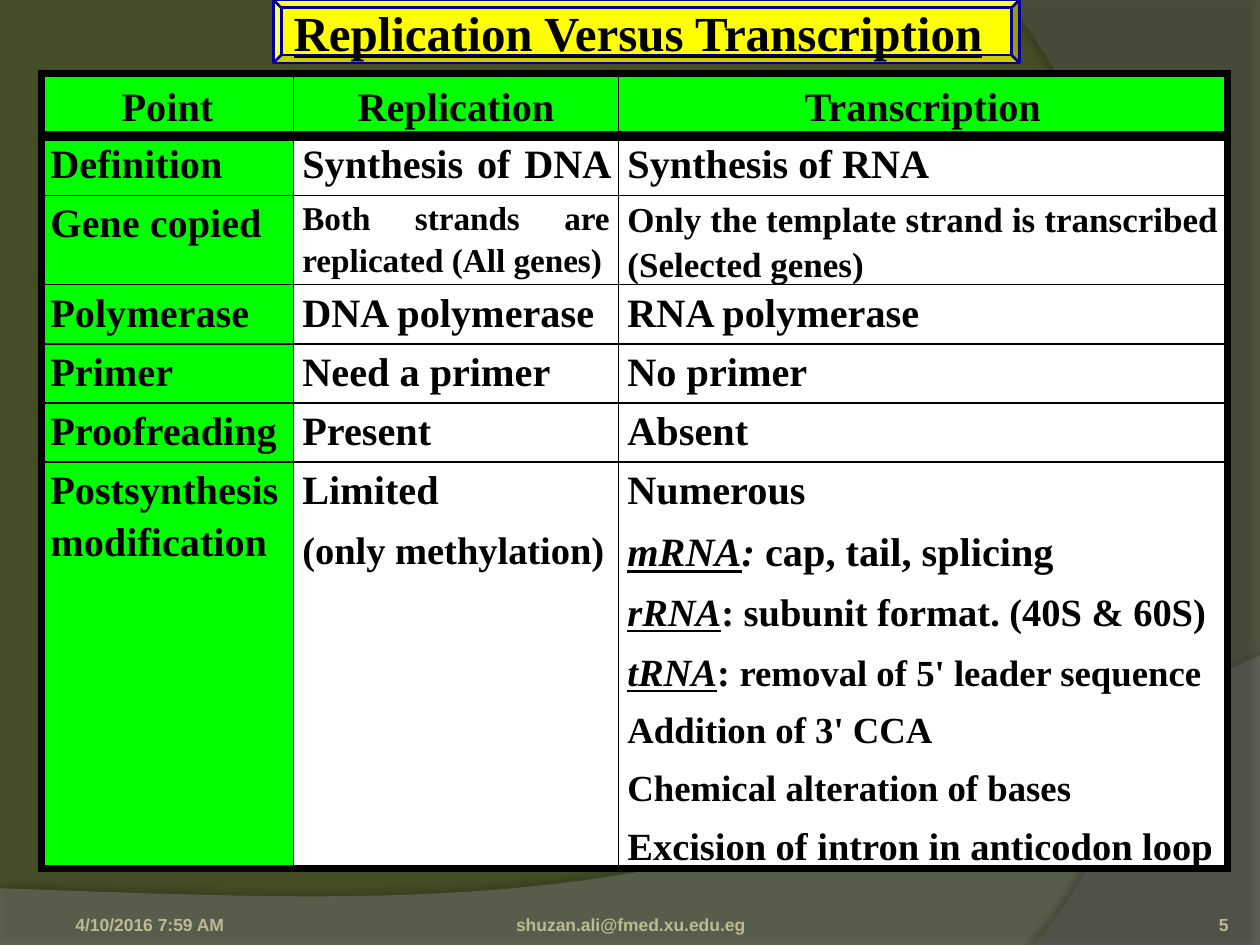
from lxml import etree
from pptx import Presentation
from pptx.dml.color import RGBColor
from pptx.enum import shapes, text
from pptx.oxml import parse_xml
from pptx.oxml.ns import nsdecls, qn
from pptx.util import Inches, Pt

ALIGN = text.PP_ALIGN
ANCHOR = text.MSO_ANCHOR
SERIF = "Times New Roman"
BLACK, GREEN, WHITE = "000000", "00FF00", "FFFFFF"


def paint(color_format, hex_color):
    """Give a fill or a font a solid colour."""
    if hasattr(color_format, "solid"):
        color_format.solid()
        color_format = color_format.fore_color
    else:
        color_format = color_format.color
    color_format.rgb = RGBColor.from_string(hex_color)


def add_run(paragraph, words, size, font=SERIF, color=BLACK, style=""):
    """Add a bold run; style may hold i (italic) and u (underline)."""
    run = paragraph.add_run()
    run.text = words
    run.font.name, run.font.size, run.font.bold = font, Pt(size), True
    run.font.italic, run.font.underline = "i" in style, "u" in style
    paint(run.font, color)


prs = Presentation()
prs.slide_width, prs.slide_height = Inches(10), Inches(7.5)
slide = prs.slides.add_slide(prs.slide_layouts[5])
paint(slide.background.fill, "444D26")

# Background waves: corner points, then one Bezier curve given by four points.
# Each ends with colour, opacity and shadow (opacity, blur, distance, angle).
waves = [
    ([(0, 7.5), (10, 7.5)], [(10, 5.2), (5.59, 7.29), (3.91, 7.19), (0, 7.05)],
     "7F7F7F", 45, (35, 4, 3.5, 270)),
    ([(10, 0), (10, 7.5)], [(8.21, 7.5), (9.35, 6.19), (10.18, 3), (8, 0)],
     "5E5E5E", 40, (45, 4, 4, 180)),
]
STEPS = 40
for corners, curve, color, opacity, (shade, blur, distance, angle) in waves:
    points = list(corners)
    for step in range(STEPS + 1):
        t = step / STEPS
        weights = ((1 - t) ** 3, 3 * t * (1 - t) ** 2, 3 * t * t * (1 - t), t ** 3)
        points.append([sum(w * p[axis] for w, p in zip(weights, curve)) for axis in (0, 1)])
    outline = [(Inches(x), Inches(y)) for x, y in points]
    builder = slide.shapes.build_freeform(*outline[0])
    builder.add_line_segments(outline[1:], close=True)
    wave = builder.convert_to_shape()
    paint(wave.fill, color)
    wave.line.fill.background()
    wave.shadow.inherit = False
    properties = wave._element.spPr
    fill_color = properties.find(qn("a:solidFill"))[0]
    etree.SubElement(fill_color, qn("a:alpha"), val=str(opacity * 1000))
    properties.find(qn("a:effectLst")).append(parse_xml(
        f'<a:outerShdw {nsdecls("a")} blurRad="{Pt(blur)}" dist="{Pt(distance)}" '
        f'dir="{angle * 60000}" rotWithShape="0"><a:srgbClr val="000000">'
        f'<a:alpha val="{shade * 1000}"/></a:srgbClr></a:outerShdw>'))

# Each cell is a list of paragraphs, each paragraph a list of (words, size, style).
rows = [
    [[[(head, 23, "")]] for head in ("Point", "Replication", "Transcription")],
    [[[("Definition ", 23, "")]], [[("Synthesis of DNA ", 23, "")]],
     [[("Synthesis of RNA ", 23, "")]]],
    [[[("Gene copied", 23, "")]],
     [[("Both strands are replicated (All genes)", 19, "")]],
     [[("Only the template strand is transcribed (Selected genes)", 20, "")]]],
    [[[("Polymerase ", 23, "")]], [[("DNA polymerase", 23, "")]],
     [[("RNA polymerase", 23, "")]]],
    [[[("Primer ", 23, "")]], [[("Need a primer ", 23, "")]], [[("No primer", 23, "")]]],
    [[[("Proofreading", 23, "")]], [[("Present", 23, "")]], [[("Absent", 23, "")]]],
    [[[("Postsynthesis modification", 23, "")]],
     [[("Limited ", 23, "")], [("(only methylation)", 22, "")]],
     [[("Numerous ", 23, "")],
      [("mRNA", 23, "iu"), (": ", 23, "i"), ("cap, tail, splicing ", 23, "")],
      [("rRNA", 22, "iu"), (": subunit format. (40S & 60S)", 22, "")],
      [("tRNA", 22, "iu"), (": ", 22, ""), ("removal of 5' leader sequence", 21, "")],
      [("Addition of 3' CCA", 21, "")],
      [("Chemical alteration of bases", 21, "")],
      [("Excision of intron in anticodon loop", 22, "")]]],
]
column_widths = [2, 2.58, 4.83]
row_heights = [0.5, 0.47, 0.71, 0.47, 0.47, 0.47, 3.22]
table = slide.shapes.add_table(
    len(rows), len(column_widths), Inches(0.33), Inches(0.58),
    Inches(sum(column_widths)), Inches(sum(row_heights))).table
for column, width in zip(table.columns, column_widths):
    column.width = Inches(width)
for row, height in zip(table.rows, row_heights):
    row.height = Inches(height)

OUTER, HEADER_RULE, INNER = 4.5, 6, 1
last_row, last_column = len(rows) - 1, len(column_widths) - 1
for r, row in enumerate(rows):
    for c, paragraphs in enumerate(row):
        cell = table.cell(r, c)
        cell.margin_left = cell.margin_right = Inches(0.07)
        cell.margin_top = cell.margin_bottom = 0
        cell.vertical_anchor = ANCHOR.MIDDLE if r == 0 else ANCHOR.TOP
        borders = {
            "lnL": OUTER if c == 0 else INNER,
            "lnR": OUTER if c == last_column else INNER,
            "lnT": {0: OUTER, 1: HEADER_RULE}.get(r, INNER),
            "lnB": {0: HEADER_RULE, last_row: OUTER}.get(r, INNER),
        }
        for side, weight in borders.items():
            cell._tc.get_or_add_tcPr().append(parse_xml(
                f'<a:{side} {nsdecls("a")} w="{Pt(weight)}"><a:solidFill>'
                f'<a:srgbClr val="{BLACK}"/></a:solidFill></a:{side}>'))
        paint(cell.fill, GREEN if r == 0 or c == 0 else WHITE)
        for i, runs in enumerate(paragraphs):
            frame = cell.text_frame
            paragraph = frame.add_paragraph() if i else frame.paragraphs[0]
            paragraph.alignment = ALIGN.CENTER if r == 0 else ALIGN.JUSTIFY
            paragraph.line_spacing, paragraph.space_after = 1.15, Pt(6)
            for words, size, style in runs:
                add_run(paragraph, words, size, style=style)

# Bevelled plate with the title inside its rim
plate = slide.shapes.add_shape(
    shapes.MSO_SHAPE.BEVEL, Inches(2.17), 0, Inches(5.92), Inches(0.5))
plate.shadow.inherit = False
paint(plate.fill, "FFFF00")
paint(plate.line.fill, "000099")
plate.line.width = Pt(1.5)

title = slide.shapes.title
title.left, title.top = Inches(2.23), Inches(0.06)
title.width, title.height = Inches(5.8), Inches(0.38)
heading = title.text_frame
heading.margin_top = heading.margin_bottom = 0
heading.vertical_anchor = ANCHOR.MIDDLE
heading.auto_size = text.MSO_AUTO_SIZE.NONE
heading.paragraphs[0].alignment = ALIGN.LEFT
add_run(heading.paragraphs[0], "Replication Versus Transcription", 28, style="u")
slide.shapes._spTree.append(title._element)  # bring in front of the plate

footers = [
    ("4/10/2016 7:59 AM", 0.5, 2.33, 0.1, ALIGN.LEFT),
    ("shuzan.ali@fmed.xu.edu.eg", 3.42, 3.17, 0, ALIGN.CENTER),
    ("5", 8.92, 0.83, 0, ALIGN.RIGHT),
]
for words, left, width, margin, alignment in footers:
    footer = slide.shapes.add_textbox(
        Inches(left), Inches(7.02), Inches(width), Inches(0.4)).text_frame
    footer.word_wrap = True
    footer.vertical_anchor = ANCHOR.BOTTOM
    footer.margin_left = footer.margin_right = Inches(margin)
    footer.margin_bottom = 0
    footer.paragraphs[0].alignment = alignment
    add_run(footer.paragraphs[0], words, 10, "Arial", "BCB995")

prs.save("out.pptx")
